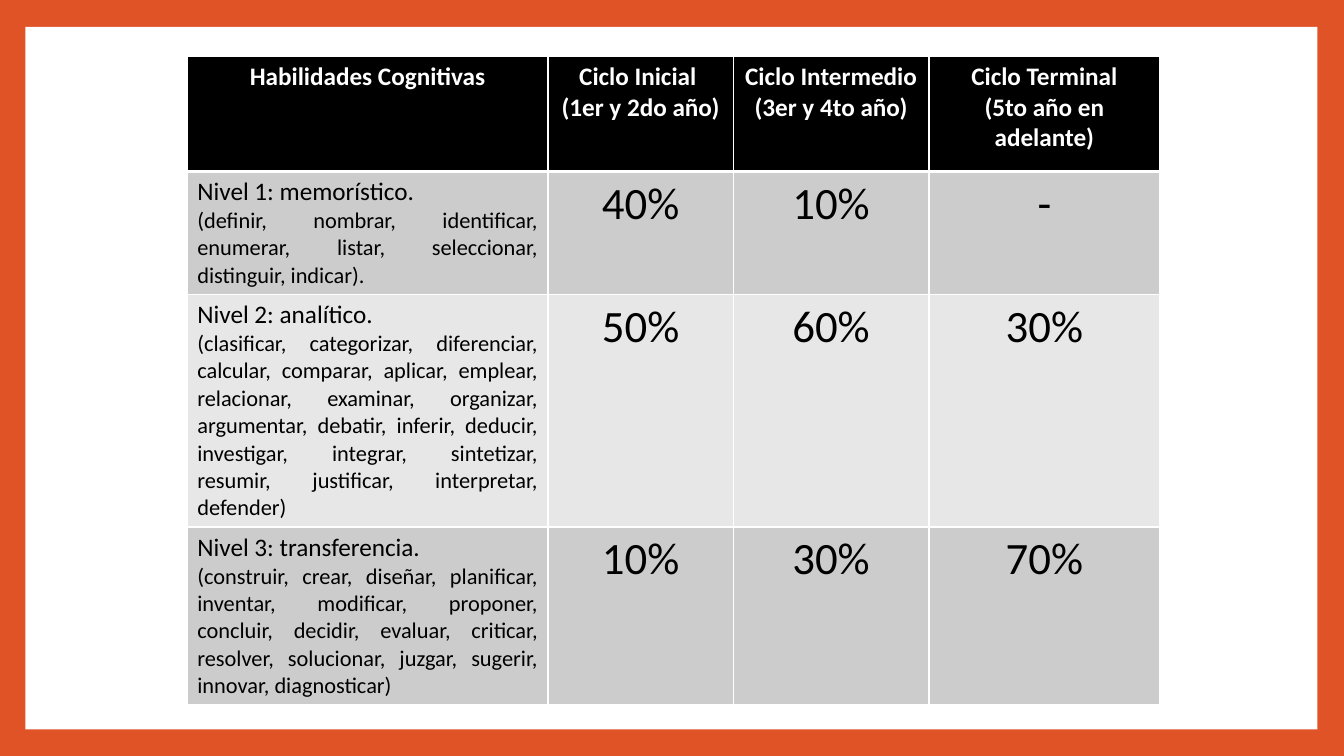
"""Build the slide on cognitive skills by study cycle."""
from lxml import etree
from pptx import Presentation
from pptx import util as u
from pptx.dml.color import RGBColor
from pptx.enum import shapes, text
from pptx.oxml import ns

ALIGN = text.PP_ALIGN
HEADINGS = [
    ["Habilidades Cognitivas"],
    ["Ciclo Inicial ", "(1er y 2do año)"],
    ["Ciclo Intermedio ", "(3er y 4to año)"],
    ["Ciclo Terminal", "(5to año en adelante)"],
]
LEVELS = [
    ("Nivel 1: memorístico.",
     "(definir, nombrar, identificar, enumerar, listar, seleccionar, "
     "distinguir, indicar).",
     ["40%", "10%", "-"]),
    ("Nivel 2: analítico.",
     "(clasificar, categorizar, diferenciar, calcular, comparar, aplicar, "
     "emplear, relacionar, examinar, organizar, argumentar, debatir, inferir, "
     "deducir, investigar, integrar, sintetizar, resumir, justificar, "
     "interpretar, defender)",
     ["50%", "60%", "30%"]),
    ("Nivel 3: transferencia.",
     "(construir, crear, diseñar, planificar, inventar, modificar, proponer, "
     "concluir, decidir, evaluar, criticar, resolver, solucionar, juzgar, "
     "sugerir, innovar, diagnosticar)",
     ["10%", "30%", "70%"]),
]
COLUMN_WIDTHS = [9.09, 4.67, 4.93, 5.82]
ROW_HEIGHTS = [2.9, 2.67, 4.9, 4.34]


def color(value):
    return RGBColor.from_string(value)


class SlideBuilder:
    font = "Calibri"
    accent, white, black = "DF5327", "FFFFFF", "000000"
    bands = ["CCCCCC", "E7E7E7"]

    def __init__(self, deck):
        self.page = deck.slides.add_slide(deck.slide_layouts[6])

    def background(self):
        fill = self.page.background.fill
        fill.solid()
        fill.fore_color.rgb = color(self.accent)

    def panel(self, left, top, width, height):
        box = self.page.shapes.add_shape(
            shapes.MSO_SHAPE.RECTANGLE,
            *map(u.Cm, (left, top, width, height)))
        box.shadow.inherit = False
        box.fill.solid()
        box.fill.fore_color.rgb = color(self.white)
        box.line.fill.background()

    def table(self, left, top, widths, heights):
        frame = self.page.shapes.add_table(
            len(heights), len(widths), u.Cm(left), u.Cm(top),
            u.Cm(sum(widths)), u.Cm(sum(heights)))
        grid = frame.table
        for column, width in zip(grid.columns, widths):
            column.width = u.Cm(width)
        for row, height in zip(grid.rows, heights):
            row.height = u.Cm(height)
        return grid

    def borders(self, cell, top, bottom):
        properties = cell._tc.get_or_add_tcPr()
        for side, points in zip("LRTB", (1, 1, top, bottom)):
            line = etree.SubElement(properties, ns.qn(f"a:ln{side}"),
                                    w=str(u.Pt(points)))
            fill = etree.SubElement(line, ns.qn("a:solidFill"))
            etree.SubElement(fill, ns.qn("a:srgbClr"), val=self.white)

    def cell(self, cell, lines, fill, ink, align, bold=False, top=1, bottom=1):
        self.borders(cell, top, bottom)
        cell.fill.solid()
        cell.fill.fore_color.rgb = color(fill)
        for index, (words, size) in enumerate(lines):
            frame = cell.text_frame
            para = frame.add_paragraph() if index else frame.paragraphs[0]
            para.alignment = align
            span = para.add_run()
            span.text = words
            span.font.name = self.font
            span.font.size = u.Pt(size)
            span.font.bold = bold
            span.font.color.rgb = color(ink)

    def skills_table(self):
        grid = self.table(4.72, 1.42, COLUMN_WIDTHS, ROW_HEIGHTS)
        for column, heading in enumerate(HEADINGS):
            self.cell(grid.cell(0, column), [(line, 18) for line in heading],
                      self.black, self.white, ALIGN.CENTER, True, bottom=3)
        for row, (level, verbs, shares) in enumerate(LEVELS, 1):
            band = self.bands[(row - 1) % 2]
            top = 3 if row == 1 else 1
            self.cell(grid.cell(row, 0), [(level, 18), (verbs, 16)],
                      band, self.black, ALIGN.JUSTIFY, top=top)
            for column, share in enumerate(shares, 1):
                self.cell(grid.cell(row, column), [(share, 32)],
                          band, self.black, ALIGN.CENTER, top=top)


def main():
    deck = Presentation()
    deck.slide_width, deck.slide_height = u.Cm(33.87), u.Cm(19.05)
    builder = SlideBuilder(deck)
    builder.background()
    builder.panel(0.64, 0.68, 32.56, 17.7)
    builder.skills_table()
    deck.save("out.pptx")


if __name__ == "__main__":
    main()
